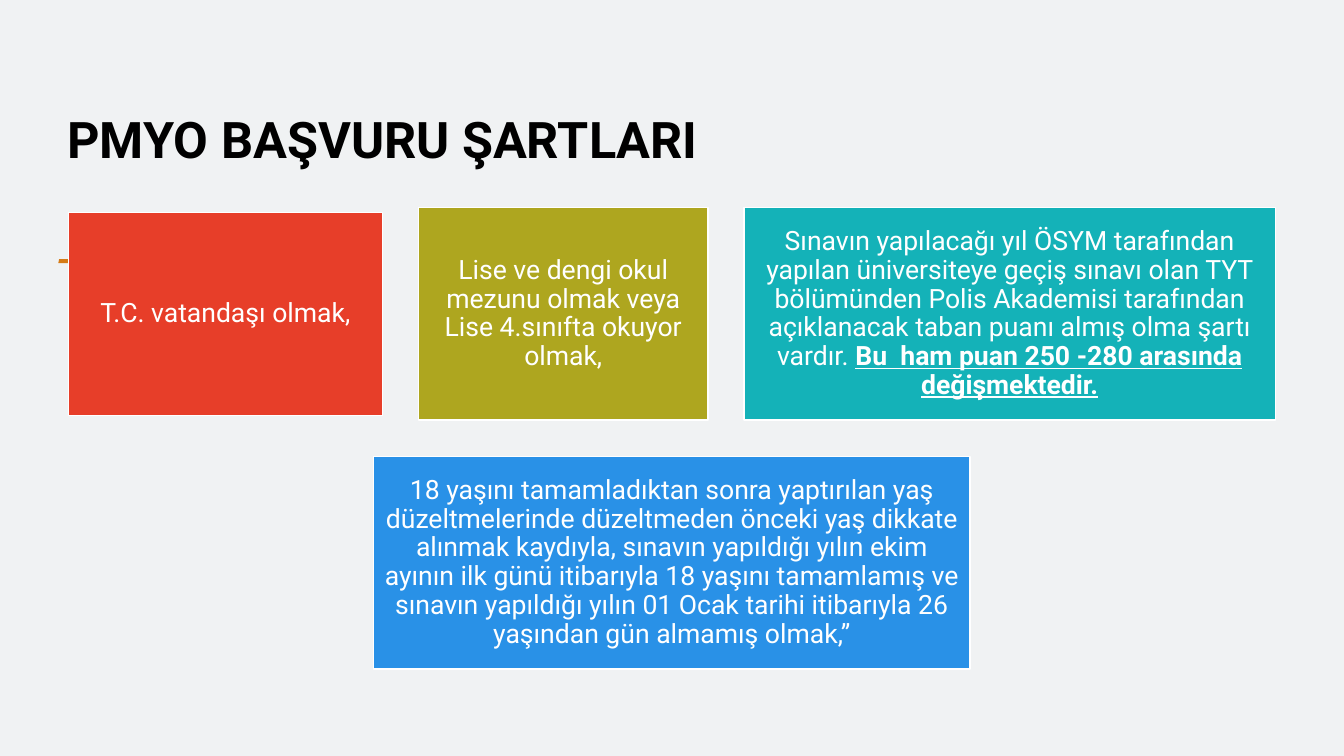
import pptx
import pptx.util
from pptx.dml.color import RGBColor
from pptx.enum.shapes import MSO_SHAPE
from pptx.enum.text import MSO_ANCHOR, PP_ALIGN
from pptx.util import Cm

# Content
HEADING = "PMYO BAŞVURU ŞARTLARI"
RED = RGBColor(0xE7, 0x3E, 0x29)
OLIVE = RGBColor(0xAE, 0xA6, 0x1F)
TEAL = RGBColor(0x14, 0xB2, 0xB8)
BLUE = RGBColor(0x29, 0x91, 0xE7)
WHITE = RGBColor(0xFF, 0xFF, 0xFF)
BLACK = RGBColor(0x00, 0x00, 0x00)
ORANGE = RGBColor(0xD5, 0x7B, 0x17)
BACKGROUND = RGBColor(0xF0, 0xF2, 0xF3)
FONT = "Roboto"

# Rows of requirements: (plain text, emphasised text, colour, width, height) in cm
REQUIREMENT_ROWS = [
    [
        ("T.C. vatandaşı olmak,", "", RED, 7.92, 5.11),
        ("Lise ve dengi okul mezunu olmak veya Lise 4.sınıfta okuyor olmak,",
         "", OLIVE, 7.29, 5.36),
        ("Sınavın yapılacağı yıl ÖSYM tarafından yapılan üniversiteye geçiş "
         "sınavı olan TYT bölümünden Polis Akademisi tarafından açıklanacak "
         "taban puanı almış olma şartı vardır. ",
         "Bu  ham puan 250 -280 arasında değişmektedir.", TEAL, 13.39, 5.36),
    ],
    [
        ("18 yaşını tamamladıktan sonra yaptırılan yaş düzeltmelerinde "
         "düzeltmeden önceki yaş dikkate alınmak kaydıyla, sınavın yapıldığı "
         "yılın ekim ayının ilk günü itibarıyla 18 yaşını tamamlamış ve "
         "sınavın yapıldığı yılın 01 Ocak tarihi itibarıyla 26 yaşından gün "
         "almamış olmak,”", "", BLUE, 15.04, 5.36),
    ],
]
ROWS_CENTRE, ROWS_TOP, GAP = 16.93, 5.23, 0.91
ACCENT = [(1.49, 6.53), (4.16, 6.53), (3.96, 6.63), (1.47, 6.63)]


def add_requirement(slide, requirement, left, top):
    plain, emphasised, colour, width, height = requirement
    box = slide.shapes.add_shape(
        MSO_SHAPE.RECTANGLE, Cm(left), Cm(top), Cm(width), Cm(height))
    box.shadow.inherit = False
    box.fill.solid()
    box.fill.fore_color.rgb = colour
    box.line.color.rgb = WHITE
    box.line.width = pptx.util.Pt(1)

    frame = box.text_frame
    frame.word_wrap = True
    frame.vertical_anchor = MSO_ANCHOR.MIDDLE
    frame.margin_left = frame.margin_right = Cm(0.2)
    frame.margin_top = frame.margin_bottom = Cm(0.2)
    paragraph = frame.paragraphs[0]
    paragraph.alignment = PP_ALIGN.CENTER
    paragraph.line_spacing = 0.9
    paragraph.font.name = FONT
    paragraph.font.size = pptx.util.Pt(19)
    paragraph.font.color.rgb = WHITE
    paragraph.add_run().text = plain
    if emphasised:
        emphasis = paragraph.add_run()
        emphasis.text = emphasised
        emphasis.font.bold = True
        emphasis.font.underline = True


def main():
    deck = pptx.Presentation()
    deck.slide_width, deck.slide_height = Cm(33.87), Cm(19.05)
    slide = deck.slides.add_slide(deck.slide_layouts[6])
    slide.background.fill.solid()
    slide.background.fill.fore_color.rgb = BACKGROUND

    # Heading
    heading = slide.shapes.add_textbox(Cm(1.45), Cm(2.18), Cm(28), Cm(3.68))
    frame = heading.text_frame
    frame.word_wrap = True
    frame.vertical_anchor = MSO_ANCHOR.BOTTOM
    frame.margin_bottom = Cm(1.62)
    paragraph = frame.paragraphs[0]
    paragraph.text = HEADING
    paragraph.font.name = FONT
    paragraph.font.size = pptx.util.Pt(36)
    paragraph.font.bold = True
    paragraph.font.color.rgb = BLACK

    # Accent stroke, partly behind the first requirement
    start, *rest = [(Cm(x), Cm(y)) for x, y in ACCENT]
    outline = slide.shapes.build_freeform(*start)
    outline.add_line_segments(rest)
    accent = outline.convert_to_shape()
    accent.shadow.inherit = False
    accent.fill.solid()
    accent.fill.fore_color.rgb = ORANGE
    accent.line.fill.background()

    # Requirements: each row centred, boxes centred vertically within it
    top = ROWS_TOP
    for row in REQUIREMENT_ROWS:
        row_width = sum(item[3] for item in row) + GAP * (len(row) - 1)
        row_height = max(item[4] for item in row)
        left = ROWS_CENTRE - row_width / 2
        for requirement in row:
            width, height = requirement[3:]
            add_requirement(slide, requirement, left,
                            top + (row_height - height) / 2)
            left += width + GAP
        top += row_height + GAP

    deck.save("out.pptx")


if __name__ == "__main__":
    main()
